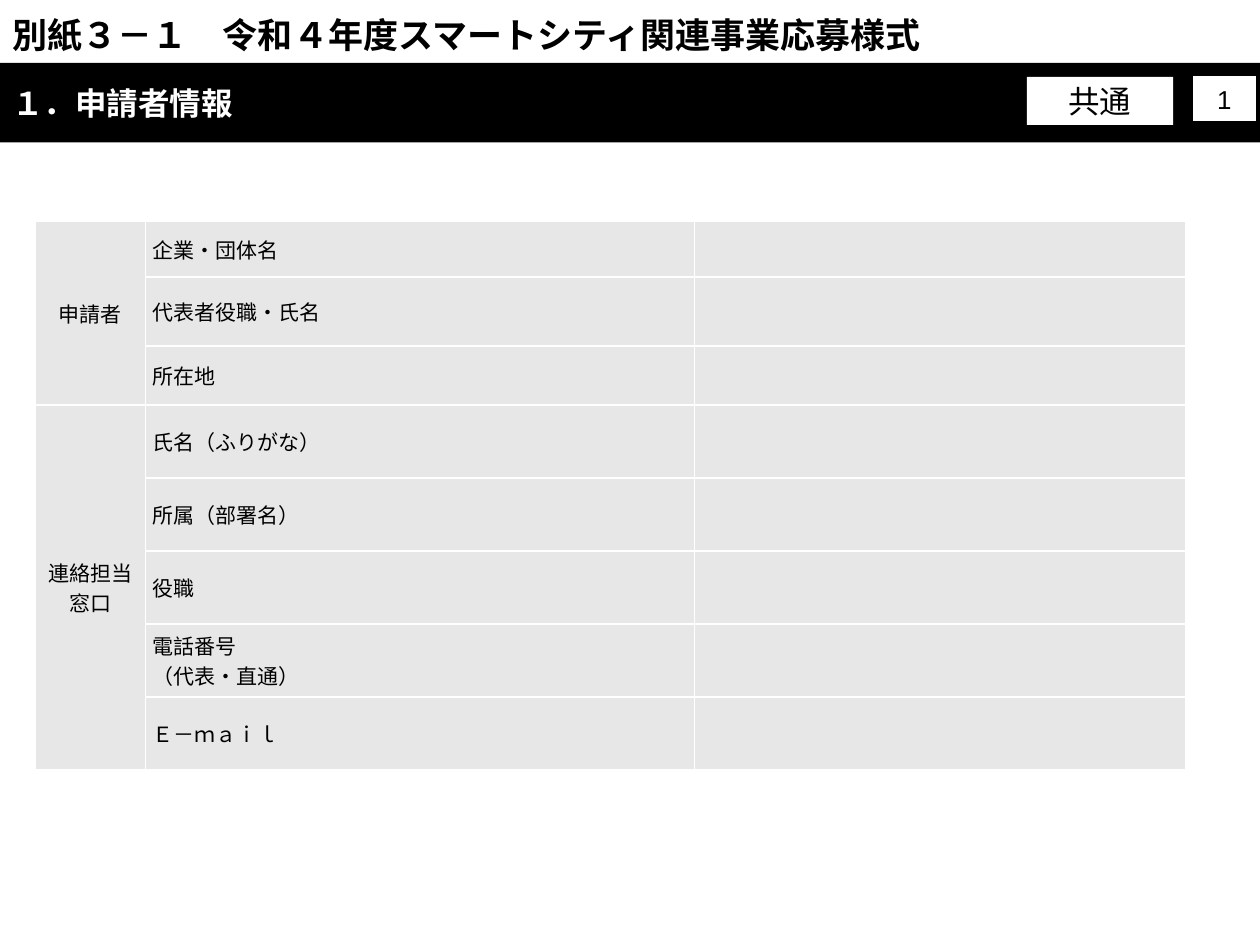
import pptx
import pptx.dml.color
import pptx.enum.shapes
import pptx.enum.text
import pptx.oxml.ns
import pptx.util
from lxml import etree

Cm, Pt = pptx.util.Cm, pptx.util.Pt
RGBColor = pptx.dml.color.RGBColor
ALIGN = pptx.enum.text.PP_ALIGN
MIDDLE = pptx.enum.text.MSO_ANCHOR.MIDDLE

BLACK = RGBColor(0x00, 0x00, 0x00)
WHITE = RGBColor(0xFF, 0xFF, 0xFF)
GREY = RGBColor(0xE7, 0xE7, 0xE7)
JAPANESE = "Noto Sans CJK JP"
LATIN = "Arial"

COLUMN_WIDTHS = [2.22, 11.07, 9.9]
ROW_HEIGHTS = [1.11, 1.4, 1.19] + [1.47] * 5
GROUPS = [
    ("申請者", ["企業・団体名", "代表者役職・氏名", "所在地"]),
    ("連絡担当窓口", ["氏名（ふりがな）", "所属（部署名）", "役職",
                "電話番号\n（代表・直通）", "Ｅ－ｍａｉｌ"]),
]


class FormSlide:
    def __init__(self, prs):
        self.slide = prs.slides.add_slide(prs.slide_layouts[5])

    def set_text(self, tf, text, size, align=ALIGN.LEFT, font=LATIN, color=BLACK, bold=False):
        tf.text = text
        for p in tf.paragraphs:
            p.alignment = align
            p.font.size = Pt(size)
            p.font.name = font
            p.font.bold = bold
            p.font.color.rgb = color
            ea = etree.SubElement(p.font._element, pptx.oxml.ns.qn("a:ea"))
            ea.set("typeface", JAPANESE)

    def title(self, text, left, top, width, height):
        sp = self.slide.shapes.title
        sp.left, sp.top, sp.width, sp.height = map(Cm, (left, top, width, height))
        tf = sp.text_frame
        tf.auto_size = pptx.enum.text.MSO_AUTO_SIZE.NONE
        tf.vertical_anchor = MIDDLE
        self.set_text(tf, text, 20, bold=True)

    def box(self, text, left, top, width, height, fill=WHITE, line=None, **style):
        sp = self.slide.shapes.add_shape(
            pptx.enum.shapes.MSO_SHAPE.RECTANGLE, *map(Cm, (left, top, width, height)))
        sp.shadow.inherit = False
        sp.fill.solid()
        sp.fill.fore_color.rgb = fill
        if line is None:
            sp.line.fill.background()
        else:
            sp.line.color.rgb = line
            sp.line.width = Pt(0.75)
        sp.text_frame.vertical_anchor = MIDDLE
        self.set_text(sp.text_frame, text, **style)

    def cell(self, cell, text, align):
        cell.fill.solid()
        cell.fill.fore_color.rgb = GREY
        cell.vertical_anchor = MIDDLE
        cell.margin_left = cell.margin_right = Cm(0.15)
        cell.margin_top = cell.margin_bottom = 0
        self.set_text(cell.text_frame, text, 12, align, JAPANESE)

    def form_table(self, left, top):
        """Add one merged heading per group, its field names and blank answer cells."""
        size = sum(COLUMN_WIDTHS), sum(ROW_HEIGHTS)
        table = self.slide.shapes.add_table(
            len(ROW_HEIGHTS), len(COLUMN_WIDTHS), *map(Cm, (left, top, *size))).table
        table.first_row = table.horz_banding = False
        for column, width in zip(table.columns, COLUMN_WIDTHS):
            column.width = Cm(width)
        for row, height in zip(table.rows, ROW_HEIGHTS):
            row.height = Cm(height)
        start = 0
        for heading, fields in GROUPS:
            for i, field in enumerate(fields, start):
                self.cell(table.cell(i, 0), heading if i == start else "", ALIGN.CENTER)
                self.cell(table.cell(i, 1), field, ALIGN.JUSTIFY)
                self.cell(table.cell(i, 2), "", ALIGN.JUSTIFY)
            end = start + len(fields)
            table.cell(start, 0).merge(table.cell(end - 1, 0))
            start = end


def main():
    prs = pptx.Presentation()
    prs.slide_width, prs.slide_height = Cm(25.4), Cm(19.05)
    form = FormSlide(prs)
    form.title("別紙３－１　令和４年度スマートシティ関連事業応募様式", 0, 0.13, 19.89, 1.12)
    form.form_table(0.71, 4.47)
    form.box("１．申請者情報", 0, 1.27, 25.4, 1.6, fill=BLACK,
             size=18, font=JAPANESE, color=WHITE, bold=True)
    form.box("共通", 20.7, 1.55, 2.95, 0.97, size=18, align=ALIGN.CENTER)
    form.box("1", 24.03, 1.52, 1.3, 0.94, line=BLACK, size=14.8, align=ALIGN.CENTER)
    prs.save("out.pptx")


if __name__ == "__main__":
    main()
